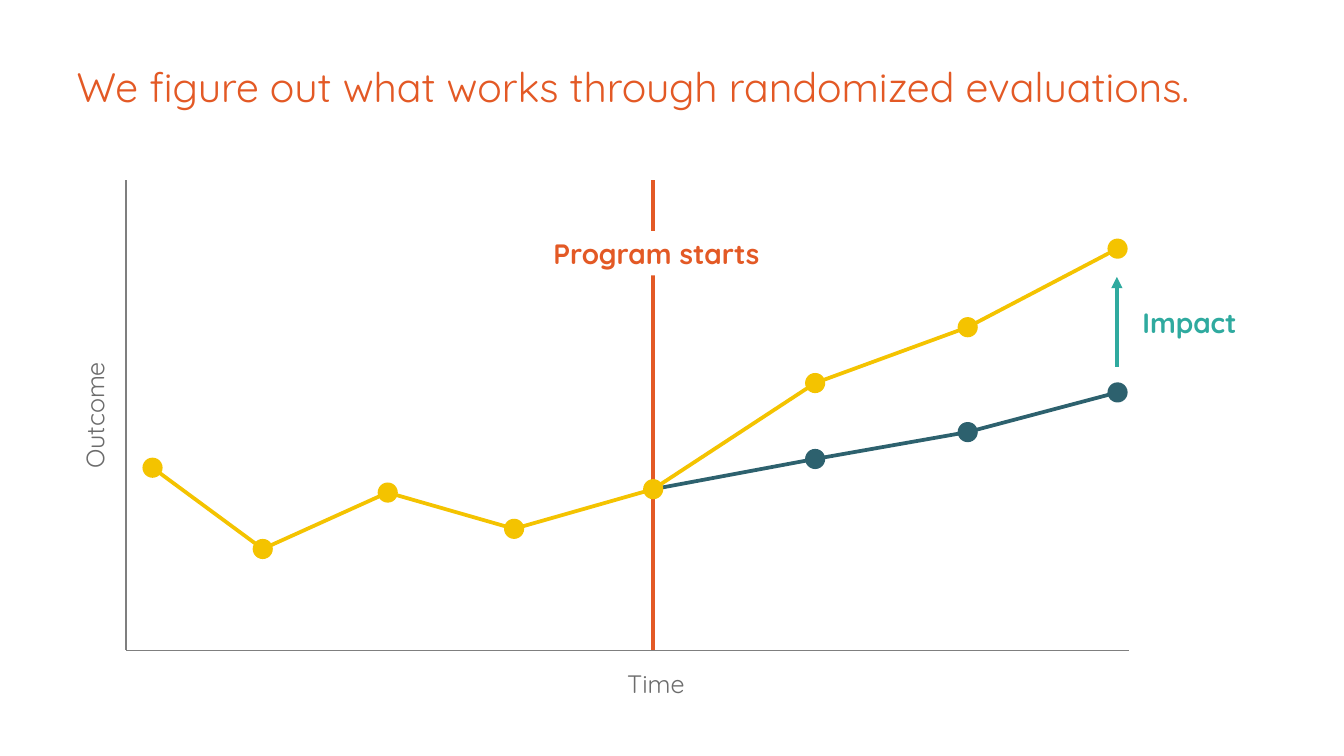
from itertools import pairwise

from lxml import etree
from pptx import Presentation, util as u
from pptx.dml import color
from pptx.enum import shapes, text
from pptx.oxml import ns

ORANGE, YELLOW, PETROL, TEAL = "E35925", "F4C300", "2D616E", "2FAA9F"
AXIS_GREY, LABEL_GREY, WHITE = "7F7F7F", "6C6C6C", "FFFFFF"
rgb = color.RGBColor.from_string

deck = Presentation()
deck.slide_width = u.Inches(10)
deck.slide_height = deck.slide_width * 9 // 16
slide = deck.slides.add_slide(deck.slide_layouts[6])
CELL = deck.slide_width // 100  # square grid, 100 columns wide


def add_text(words, left, top, width, height, *, size, ink, bold=False,
             align=text.PP_ALIGN.CENTER, anchor=text.MSO_ANCHOR.TOP, fill=None, rotation=0):
    """Place one line of text; the box is given in grid cells."""
    box = slide.shapes.add_textbox(*(round(n * CELL) for n in (left, top, width, height)))
    box.rotation = rotation
    if fill:
        box.fill.solid()
        box.fill.fore_color.rgb = rgb(fill)
    frame = box.text_frame
    frame.word_wrap = True
    frame.vertical_anchor = anchor
    frame.margin_left = frame.margin_right = u.Inches(0.07)
    frame.margin_top = frame.margin_bottom = u.Inches(0.04)
    paragraph = frame.paragraphs[0]
    paragraph.alignment = align
    run = paragraph.add_run()
    run.text = words
    run.font.name, run.font.size, run.font.bold = "Quicksand", u.Pt(size), bold
    run.font.color.rgb = rgb(ink)


def add_line(start, end, ink, weight=2):
    """Draw a straight line between two (column, row) points."""
    line = slide.shapes.add_connector(
        shapes.MSO_CONNECTOR.STRAIGHT, *(round(n * CELL) for n in (*start, *end)))
    line.line.color.rgb = rgb(ink)
    line.line.width = u.Pt(weight)
    etree.SubElement(line._element.spPr, ns.qn("a:effectLst"))
    return line


# Chart area and data points, as (column, row)
left, right, top, bottom = 9.4, 84, 13.4, 48.4
program_start = (48.6, 36.4)
before = [(11.35, 34.8), (19.55, 40.85), (28.85, 36.65), (38.25, 39.35)]
with_program = [(60.65, 28.5), (72, 24.35), (83.15, 18.5)]
without_program = [(60.65, 34.15), (72, 32.15), (83.15, 29.2)]

add_text("We figure out what works through randomized evaluations.", 5, 1.65, 90, 9.5,
         size=22, ink=ORANGE, align=text.PP_ALIGN.LEFT, anchor=text.MSO_ANCHOR.MIDDLE)

add_line((program_start[0], top), (program_start[0], bottom), ORANGE)
for start, end in pairwise([program_start, *without_program]):
    add_line(start, end, PETROL)
for start, end in pairwise([*before, program_start, *with_program]):
    add_line(start, end, YELLOW)
add_line((left, top), (left, bottom), AXIS_GREY, 1)
add_line((left, bottom), (right, bottom), AXIS_GREY, 1)

add_text("Time", 9.1, 49.35, 79.4, 3, size=13.5, ink=LABEL_GREY)
add_text("Outcome", -10.5, 29.4, 35, 3, size=13.5, ink=LABEL_GREY, rotation=270)
add_text("Program starts", 39.8, 17.2, 18.1, 3.3, size=15, ink=ORANGE, bold=True,
         anchor=text.MSO_ANCHOR.MIDDLE, fill=WHITE)

impact_arrow = add_line((83.1, 27.3), (83.1, 20.6), TEAL)
etree.SubElement(impact_arrow.line._get_or_add_ln(), ns.qn("a:tailEnd"), type="triangle")
add_text("Impact", 84.3, 22.35, 10, 3.3, size=15, ink=TEAL, bold=True,
         align=text.PP_ALIGN.LEFT)

DOT = 1.5
for points, ink in ((without_program, PETROL), ([*before, program_start, *with_program], YELLOW)):
    for column, row in points:
        dot = slide.shapes.add_shape(
            shapes.MSO_SHAPE.OVAL,
            *(round(n * CELL) for n in (column - DOT / 2, row - DOT / 2, DOT, DOT)))
        dot.shadow.inherit = False
        dot.fill.solid()
        dot.fill.fore_color.rgb = rgb(ink)
        dot.line.fill.background()

deck.save("out.pptx")
